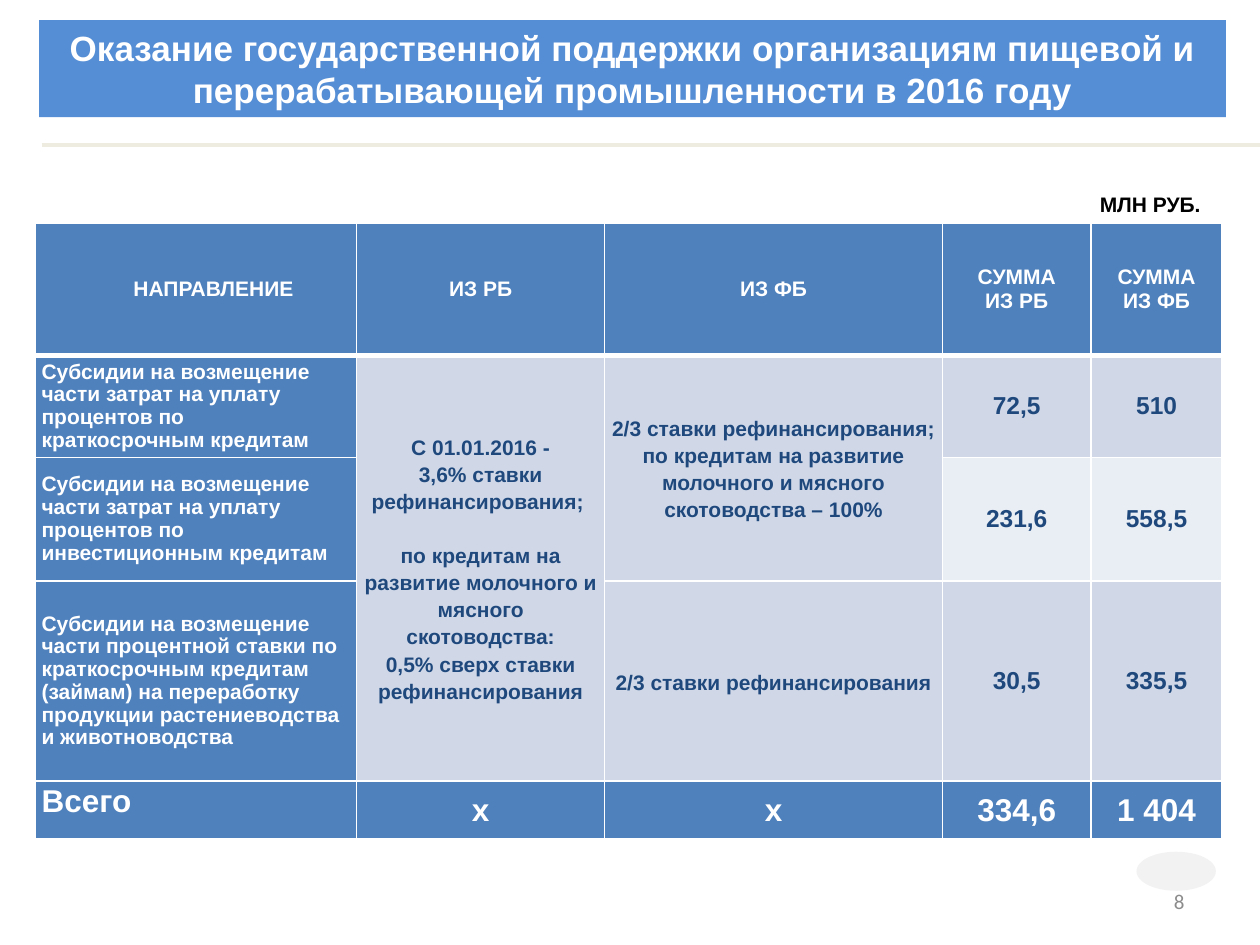
from lxml import etree
from pptx import Presentation
from pptx.dml.color import RGBColor
from pptx.enum import shapes, text
from pptx.oxml import ns
from pptx import util as u

WHITE = RGBColor(0xFF, 0xFF, 0xFF)
BLACK = RGBColor(0, 0, 0)
BANNER = RGBColor(0x55, 0x8E, 0xD5)
BLUE = RGBColor(0x4F, 0x81, 0xBD)
NAVY = RGBColor(0x1F, 0x49, 0x7D)
BAND = RGBColor(0xD0, 0xD8, 0xE8)
LIGHT_BAND = RGBColor(0xE9, 0xED, 0xF4)
BEIGE = RGBColor(0xEE, 0xEC, 0xE1)
PALE = RGBColor(0xF2, 0xF2, 0xF2)
GRAY = RGBColor(0x8C, 0x8C, 0x8C)

LEFT, CENTER, RIGHT = text.PP_ALIGN.LEFT, text.PP_ALIGN.CENTER, text.PP_ALIGN.RIGHT
TOP, MIDDLE = text.MSO_ANCHOR.TOP, text.MSO_ANCHOR.MIDDLE
GRID_COLUMNS, GRID_ROWS = 100, 75


class Page:
    font = "Arial"
    size = 12

    def __init__(self, deck):
        self.slide = deck.slides.add_slide(deck.slide_layouts[6])
        self.column = deck.slide_width / GRID_COLUMNS
        self.row = deck.slide_height / GRID_ROWS

    def across(self, columns):
        return u.Emu(round(columns * self.column))

    def down(self, rows):
        return u.Emu(round(rows * self.row))

    def place(self, left, top, width, height):
        return self.across(left), self.down(top), self.across(width), self.down(height)

    def add_lines(self, frame, lines, color, size=None, align=CENTER, spacing=None,
                  bold=True, font=None, gaps={}):
        for index, line in enumerate(lines):
            para = frame.paragraphs[0] if index == 0 else frame.add_paragraph()
            para.alignment = align
            if spacing:
                para.line_spacing = spacing
            if index in gaps:
                para.space_before = u.Pt(gaps[index])
            span = para.add_run()
            span.text = line
            span.font.name = font or self.font
            span.font.size = u.Pt(size or self.size)
            span.font.bold = bold
            span.font.color.rgb = color

    def shape(self, kind, area, fill):
        shape = self.slide.shapes.add_shape(kind, *self.place(*area))
        shape.shadow.inherit = False
        shape.fill.solid()
        shape.fill.fore_color.rgb = fill
        shape.line.fill.background()
        return shape

    def banner(self, area, line):
        box = self.shape(shapes.MSO_SHAPE.RECTANGLE, area, BANNER)
        box.text_frame.word_wrap = True
        box.text_frame.vertical_anchor = MIDDLE
        self.add_lines(box.text_frame, [line], WHITE, 20)

    def rule(self, start, end, level):
        line = self.slide.shapes.add_connector(
            shapes.MSO_CONNECTOR.STRAIGHT, self.across(start), self.down(level),
            self.across(end), self.down(level))
        line.line.color.rgb = BEIGE
        line.line.width = u.Pt(2.25)
        etree.SubElement(line._element.spPr, ns.qn("a:effectLst"))

    def label(self, area, line, color, wrap=True, anchor=TOP, **style):
        box = self.slide.shapes.add_textbox(*self.place(*area))
        box.text_frame.word_wrap = wrap
        box.text_frame.vertical_anchor = anchor
        self.add_lines(box.text_frame, [line], color, **style)

    def table(self, left, top, widths, heights):
        area = self.place(left, top, sum(widths), sum(heights))
        table = self.slide.shapes.add_table(len(heights), len(widths), *area).table
        table.first_row = table.horz_banding = False
        for column, width in zip(table.columns, widths):
            column.width = self.across(width)
        for row, height in zip(table.rows, heights):
            row.height = self.down(height)
        return table

    def edge(self, cell, side, width):
        line = etree.SubElement(cell._tc.get_or_add_tcPr(), ns.qn(f"a:ln{side}"), w=str(u.Pt(width)))
        fill = etree.SubElement(line, ns.qn("a:solidFill"))
        etree.SubElement(fill, ns.qn("a:srgbClr"), val=str(WHITE))

    def cell(self, cell, fill, top_edge=1, bottom_edge=1):
        for side, width in zip("LRTB", (1, 1, top_edge, bottom_edge)):
            self.edge(cell, side, width)
        cell.fill.solid()
        cell.fill.fore_color.rgb = fill
        cell.vertical_anchor = MIDDLE
        cell.margin_left = cell.margin_right = self.across(0.5)
        cell.margin_top = cell.margin_bottom = 0


HEADINGS = [["НАПРАВЛЕНИЕ"], ["ИЗ РБ"], ["ИЗ ФБ"], ["СУММА", "ИЗ РБ"], ["СУММА", "ИЗ ФБ"]]
DIRECTIONS = [
    "Субсидии на возмещение части затрат на уплату процентов по краткосрочным кредитам",
    "Субсидии на возмещение части затрат на уплату процентов по инвестиционным кредитам",
    "Субсидии на возмещение части процентной ставки по краткосрочным кредитам (займам) "
    "на переработку продукции растениеводства и животноводства",
]
AMOUNTS = [("72,5", "510"), ("231,6", "558,5"), ("30,5", "335,5")]
TOTALS = ["Всего", "х", "х", "334,6", "1 404"]
REPUBLIC_TERMS = [
    "С 01.01.2016 -",
    "3,6% ставки рефинансирования; ",
    "по кредитам на развитие молочного и мясного скотоводства:",
    "0,5% сверх ставки рефинансирования",
]
FEDERAL_TERMS = [
    "2/3 ставки рефинансирования;",
    "по кредитам на развитие молочного и мясного скотоводства – 100%",
]


def fill_support_table(page):
    table = page.table(2.8, 17.7, (25.5, 19.7, 26.8, 11.8, 10.4), (10.5, 8.1, 9.8, 15.9, 4.6))
    last = len(table.rows) - 1
    for row in range(last + 1):
        for column in range(len(table.columns)):
            if row in (0, last) or column == 0:
                fill = BLUE
            else:
                fill = LIGHT_BAND if row == 2 and column > 2 else BAND
            page.cell(table.cell(row, column), fill,
                      top_edge=3 if row == 1 else 1, bottom_edge=3 if row == 0 else 1)

    table.cell(1, 1).merge(table.cell(3, 1))
    table.cell(1, 2).merge(table.cell(2, 2))

    for column, heading in enumerate(HEADINGS):
        page.add_lines(table.cell(0, column).text_frame, heading, WHITE)
    table.cell(0, 0).margin_left = page.across(3.3)

    for row, (direction, amounts) in enumerate(zip(DIRECTIONS, AMOUNTS), 1):
        page.add_lines(table.cell(row, 0).text_frame, [direction], WHITE,
                       align=LEFT, spacing=u.Pt(13))
        for column, amount in enumerate(amounts, 3):
            page.add_lines(table.cell(row, column).text_frame, [amount], NAVY, 14)

    page.add_lines(table.cell(1, 1).text_frame, REPUBLIC_TERMS, NAVY, spacing=1.15, gaps={2: 15.5})
    page.add_lines(table.cell(1, 2).text_frame, FEDERAL_TERMS, NAVY, spacing=1.15)
    page.add_lines(table.cell(3, 2).text_frame, ["2/3 ставки рефинансирования"], NAVY, spacing=1.15)

    for column, total in enumerate(TOTALS):
        page.add_lines(table.cell(last, column).text_frame, [total], WHITE, 18,
                       align=CENTER if column else LEFT, spacing=None if column else u.Pt(11))
    table.cell(last, 0).vertical_anchor = TOP
    table.cell(last, 0).margin_top = page.down(1.5)


def main():
    deck = Presentation()
    deck.slide_width, deck.slide_height = u.Inches(10), u.Inches(7.5)
    page = Page(deck)
    page.banner((3.1, 1.6, 94.2, 7.7),
                "Оказание государственной поддержки организациям пищевой и "
                "перерабатывающей промышленности в 2016 году")
    page.rule(3.3, GRID_COLUMNS, 11.5)
    page.shape(shapes.MSO_SHAPE.OVAL, (90.2, 67.6, 6.3, 3.1), PALE)
    fill_support_table(page)
    page.label((86.3, 14.7, 10.1, 3), "МЛН РУБ.", BLACK, wrap=False, align=LEFT)
    page.label((71.7, 69.5, 23.3, 4), "8", GRAY, anchor=MIDDLE, align=RIGHT,
               bold=False, font="Calibri")
    deck.save("out.pptx")


if __name__ == "__main__":
    main()
